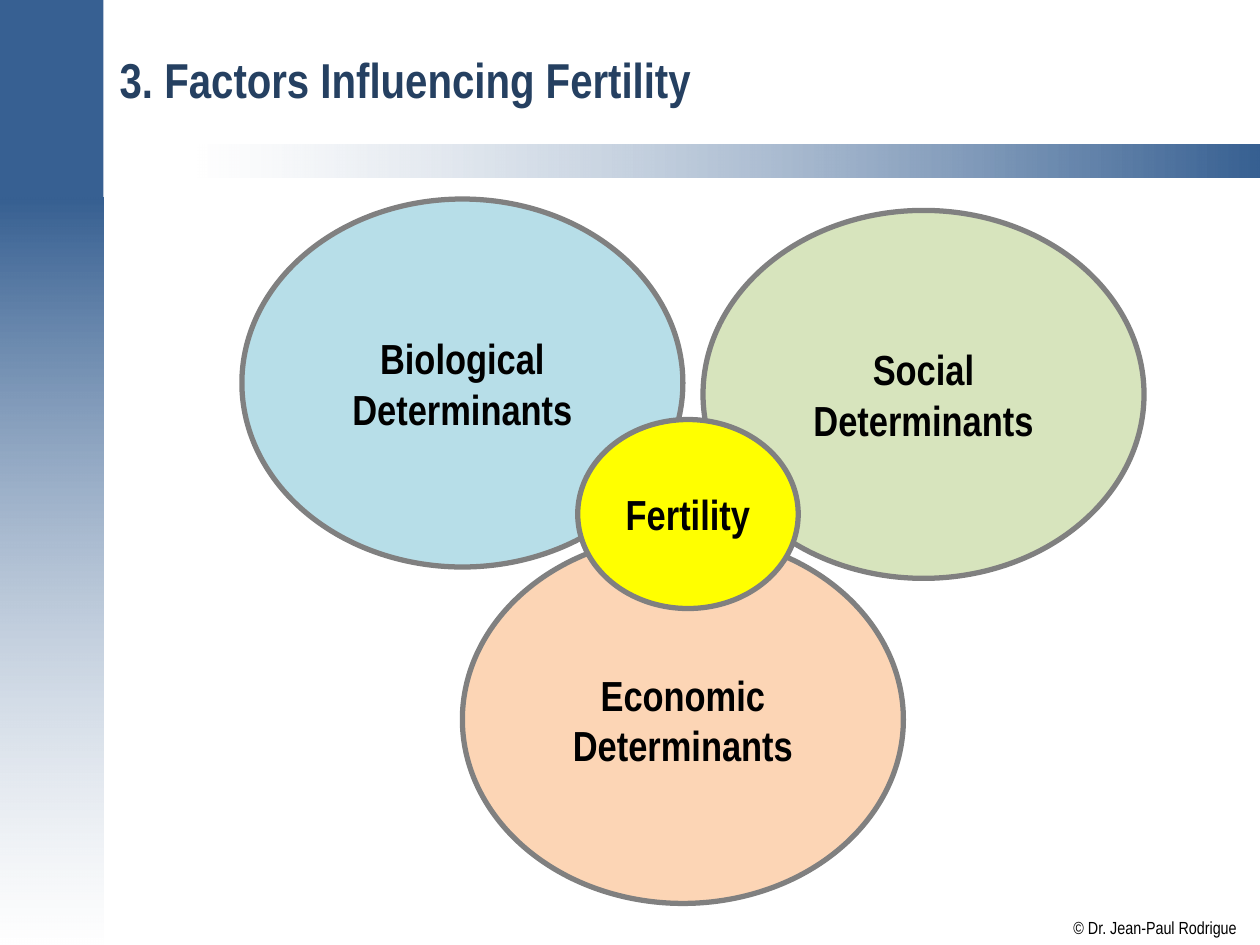
"""Build the slide on the factors that influence fertility."""
from lxml.etree import SubElement
from pptx import Presentation
from pptx.dml.color import RGBColor
from pptx.enum.shapes import MSO_SHAPE as Kind
from pptx.enum.text import MSO_ANCHOR as Anchor, MSO_AUTO_SIZE as Fit, PP_ALIGN as Align
from pptx.oxml.ns import qn
from pptx.util import Inches, Pt

WIDE, HIGH = 10, 7.5
FONT, NAVY, BLUE, WHITE, GREY = "Arial Narrow", "254061", "376092", "FFFFFF", "808080"
TITLE = "3. Factors Influencing Fertility"
CREDIT = "© Dr. Jean-Paul Rodrigue"
SIDE, TOP = 0.82, 1.57
BIG, SMALL = (3.5, 2.92), (1.75, 1.5)
OVALS = [
    (["Biological", "Determinants"], (3.67, 3.04), BIG, "B7DEE8"),
    (["Social", "Determinants"], (7.33, 3.13), BIG, "D7E4BD"),
    (["Economic", "Determinants"], (5.42, 5.71), BIG, "FCD5B5"),
    (["Fertility"], (5.46, 4.08), SMALL, "FFFF00"),
]
BANDS = [
    ((0, TOP, SIDE, HIGH - TOP), (BLUE, WHITE), 270, 51),
    ((TOP, 1.15, WIDE - TOP, 0.26), (WHITE, BLUE), 0, 50),
    ((0, 0, SIDE, TOP), (BLUE,), 0, 100),
]


def color(code):
    return RGBColor.from_string(code)


def write(shape, lines, size, tone="000000", bold=True, align=Align.CENTER,
          anchor=Anchor.MIDDLE, wrap=False, inset=None, fit=Fit.NONE):
    frame = shape.text_frame
    frame.text = "\n".join(lines)
    frame.word_wrap, frame.vertical_anchor, frame.auto_size = wrap, anchor, fit
    if inset is not None:
        frame.margin_left = frame.margin_right = Inches(inset)
        frame.margin_top = frame.margin_bottom = Inches(inset)
    for para in frame.paragraphs:
        para.alignment = align
        font = para.font
        font.name, font.size, font.bold = FONT, Pt(size), bold
        font.color.rgb = color(tone)


def draw(slide, kind, box, fill):
    shape = slide.shapes.add_shape(kind, *map(Inches, box))
    shape.shadow.inherit = False
    shape.fill.solid()
    shape.fill.fore_color.rgb = color(fill)
    shape.line.fill.background()
    return shape


def fade(shape, tones, angle, alpha):
    shape.fill.gradient()
    shape.fill.gradient_angle = angle
    for stop, tone in zip(shape.fill.gradient_stops, tones):
        stop.color.rgb = color(tone)
    for node in shape.element.spPr.iter(qn("a:srgbClr")):
        if node.get("val") == WHITE:
            SubElement(node, qn("a:alpha"), val=str(alpha * 1000))


def main():
    deck = Presentation()
    deck.slide_width, deck.slide_height = Inches(WIDE), Inches(HIGH)
    slide = deck.slides.add_slide(deck.slide_layouts[5])
    for box, tones, angle, alpha in BANDS:
        band = draw(slide, Kind.RECTANGLE, box, tones[0])
        if len(tones) > 1:
            fade(band, tones, angle, alpha)

    credit = slide.shapes.add_textbox(*map(Inches, (8.52, 7.28, 1.3, 0.17)))
    write(credit, [CREDIT], 10, bold=False, align=Align.LEFT,
          anchor=Anchor.TOP, inset=0, fit=Fit.SHAPE_TO_FIT_TEXT)

    title = slide.shapes.title
    title.left, title.top = Inches(0.85), Inches(0.11)
    title.width, title.height = Inches(8.98), Inches(1.04)
    write(title, [TITLE], 28, tone=NAVY, align=Align.LEFT, wrap=True)

    for lines, (x, y), (w, h), fill in OVALS:
        oval = draw(slide, Kind.OVAL, (x - w / 2, y - h / 2, w, h), fill)
        oval.line.color.rgb = color(GREY)
        oval.line.width = Pt(3)
        write(oval, lines, 24)

    deck.save("out.pptx")


if __name__ == "__main__":
    main()
